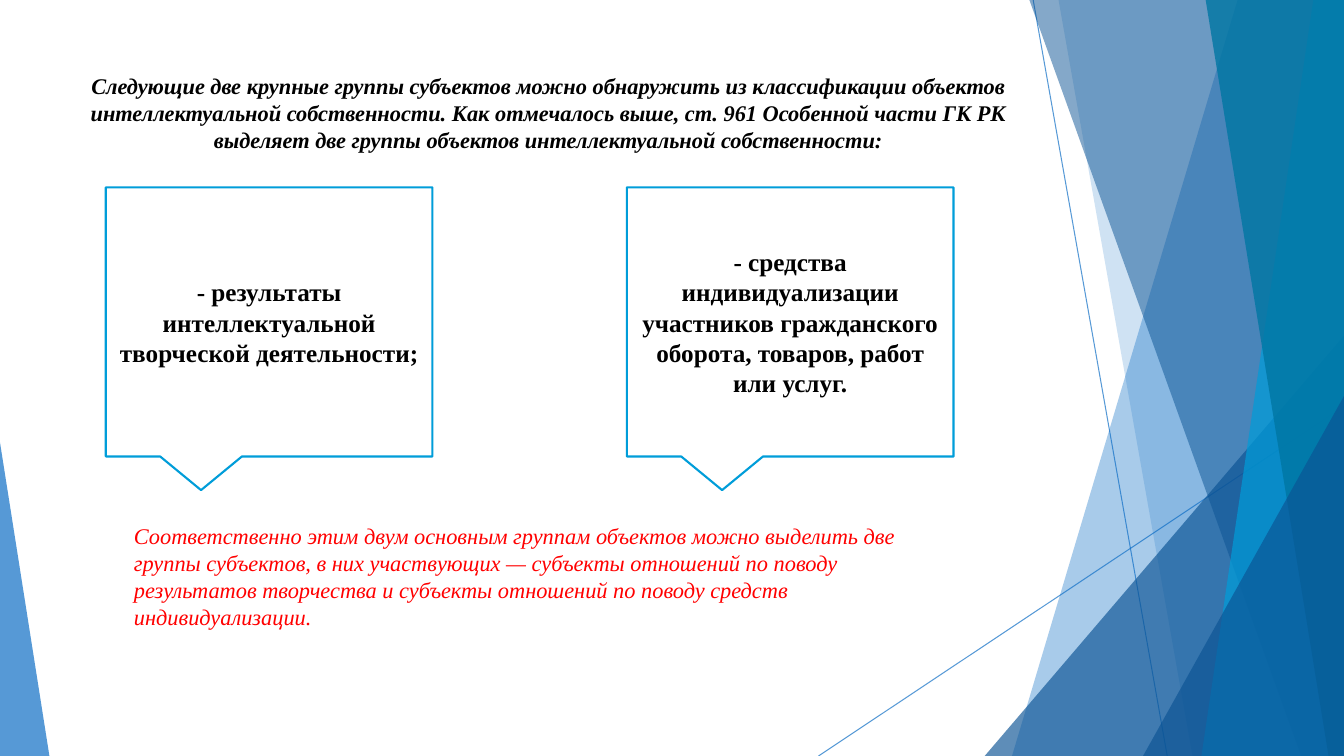
"""Builds a slide on two groups of intellectual property objects and their subjects."""
from lxml import etree
from pptx import Presentation
from pptx.dml.color import RGBColor
from pptx.enum import shapes, text
from pptx.oxml.ns import qn
from pptx.util import Pt

BLACK = RGBColor(0x00, 0x00, 0x00)
WHITE = RGBColor(0xFF, 0xFF, 0xFF)
RED = RGBColor(0xFF, 0x00, 0x00)
BLUE = RGBColor(0x0F, 0x6F, 0xC6)
NAVY = RGBColor(0x0B, 0x53, 0x94)
CYAN = RGBColor(0x00, 0x9D, 0xD9)
TEAL = RGBColor(0x00, 0x76, 0xA3)

WIDTH, HEIGHT = 960, 540
FONT = "Times New Roman"

HEADING = (
    "Следующие две крупные группы субъектов можно обнаружить из классификации объектов "
    "интеллектуальной собственности. Как отмечалось выше, ст. 961 Особенной части ГК РК "
    "выделяет две группы объектов интеллектуальной собственности:"
)
GROUPS = [
    "- результаты интеллектуальной творческой деятельности;",
    "- средства индивидуализации участников гражданского оборота, товаров, работ или услуг.",
]
CONCLUSION = (
    "Соответственно этим двум основным группам объектов можно выделить две группы субъектов, "
    "в них участвующих — субъекты отношений по поводу результатов творчества и субъекты "
    "отношений по поводу средств индивидуализации."
)

RAYS = [(738, 0, 833.76, HEIGHT), (WIDTH, 290.16, 584.64, HEIGHT)]
FACETS = [
    ("ribbon", (884.2, 722.9), BLUE, 36),
    ("ribbon", (756, 851.8), BLUE, 20),
    ("corner", (703.4, 239.8, 256.6, 1), NAVY, 66),
    ("ribbon", (735.1, 929.5), NAVY, 50),
    ("ribbon", (938.2, 858.2), CYAN, 70),
    ("ribbon", (861.1, 949), TEAL, 80),
    ("corner", (816.5, 283, 143.5, 1), NAVY, 66),
    ("corner", (0, 316.1, 35.3, 0), BLUE, 70),
]
GROUP_LEFT, GROUP_STEP = 75.6, 372.2


def points(*lengths):
    return [Pt(length) for length in lengths]


def set_opacity(part, percent):
    for color in part.element.spPr.iter(qn("a:srgbClr")):
        etree.SubElement(color, qn("a:alpha"), val=str(percent * 1000))


def write(frame, words, size, color, align, anchor, bold=False, italic=False):
    frame.text = words
    frame.word_wrap = True
    frame.vertical_anchor = anchor
    paragraph = frame.paragraphs[0]
    paragraph.alignment = align
    font = paragraph.runs[0].font
    font.name, font.size, font.color.rgb = FONT, Pt(size), color
    font.bold, font.italic = bold, italic


def add_ray(slide, ends):
    ray = slide.shapes.add_connector(shapes.MSO_CONNECTOR.STRAIGHT, *points(*ends))
    ray.line.color.rgb = BLUE
    ray.line.width = Pt(0.75)
    set_opacity(ray, 70)
    etree.SubElement(ray.element.spPr, qn("a:effectLst"))


def add_facet(slide, kind, place, color, opacity):
    if kind == "ribbon":
        top_x, bottom_x = place
        outline = slide.shapes.build_freeform(*points(top_x, -0.6))
        corners = [(WIDTH, -0.6), (WIDTH, HEIGHT), (bottom_x, HEIGHT)]
        outline.add_line_segments([points(*corner) for corner in corners])
        facet = outline.convert_to_shape()
    else:
        left, top, width, apex = place
        facet = slide.shapes.add_shape(
            shapes.MSO_SHAPE.ISOSCELES_TRIANGLE, *points(left, top, width, HEIGHT - top)
        )
        facet.adjustments[0] = apex
    facet.shadow.inherit = False
    facet.fill.solid()
    facet.fill.fore_color.rgb = color
    facet.line.fill.background()
    set_opacity(facet, opacity)


def add_group(slide, index, words):
    left = GROUP_LEFT + index * GROUP_STEP
    callout = slide.shapes.add_shape(
        shapes.MSO_SHAPE.RECTANGULAR_CALLOUT, *points(left, 133.9, 233.3, 192.2)
    )
    callout.shadow.inherit = False
    callout.fill.solid()
    callout.fill.fore_color.rgb = WHITE
    callout.line.color.rgb = CYAN
    callout.line.width = Pt(1.5)
    write(callout.text_frame, words, 18, BLACK, text.PP_ALIGN.CENTER,
          text.MSO_ANCHOR.MIDDLE, bold=True)


def main():
    deck = Presentation()
    deck.slide_width, deck.slide_height = points(WIDTH, HEIGHT)
    slide = deck.slides.add_slide(deck.slide_layouts[5])

    for ends in RAYS:
        add_ray(slide, ends)
    for facet in FACETS:
        add_facet(slide, *facet)

    heading = slide.shapes.title
    heading.element.getparent().append(heading.element)
    heading.left, heading.top, heading.width, heading.height = points(53.3, 48.2, 676.8, 103.7)
    write(heading.text_frame, HEADING, 16, BLACK, text.PP_ALIGN.CENTER,
          text.MSO_ANCHOR.TOP, bold=True, italic=True)
    heading.text_frame.auto_size = text.MSO_AUTO_SIZE.NONE

    for index, words in enumerate(GROUPS):
        add_group(slide, index, words)

    conclusion = slide.shapes.add_textbox(*points(88.6, 369.4, 576, 85))
    write(conclusion.text_frame, CONCLUSION, 16, RED, text.PP_ALIGN.LEFT,
          text.MSO_ANCHOR.TOP, italic=True)
    conclusion.text_frame.auto_size = text.MSO_AUTO_SIZE.SHAPE_TO_FIT_TEXT

    deck.save("out.pptx")


if __name__ == "__main__":
    main()
